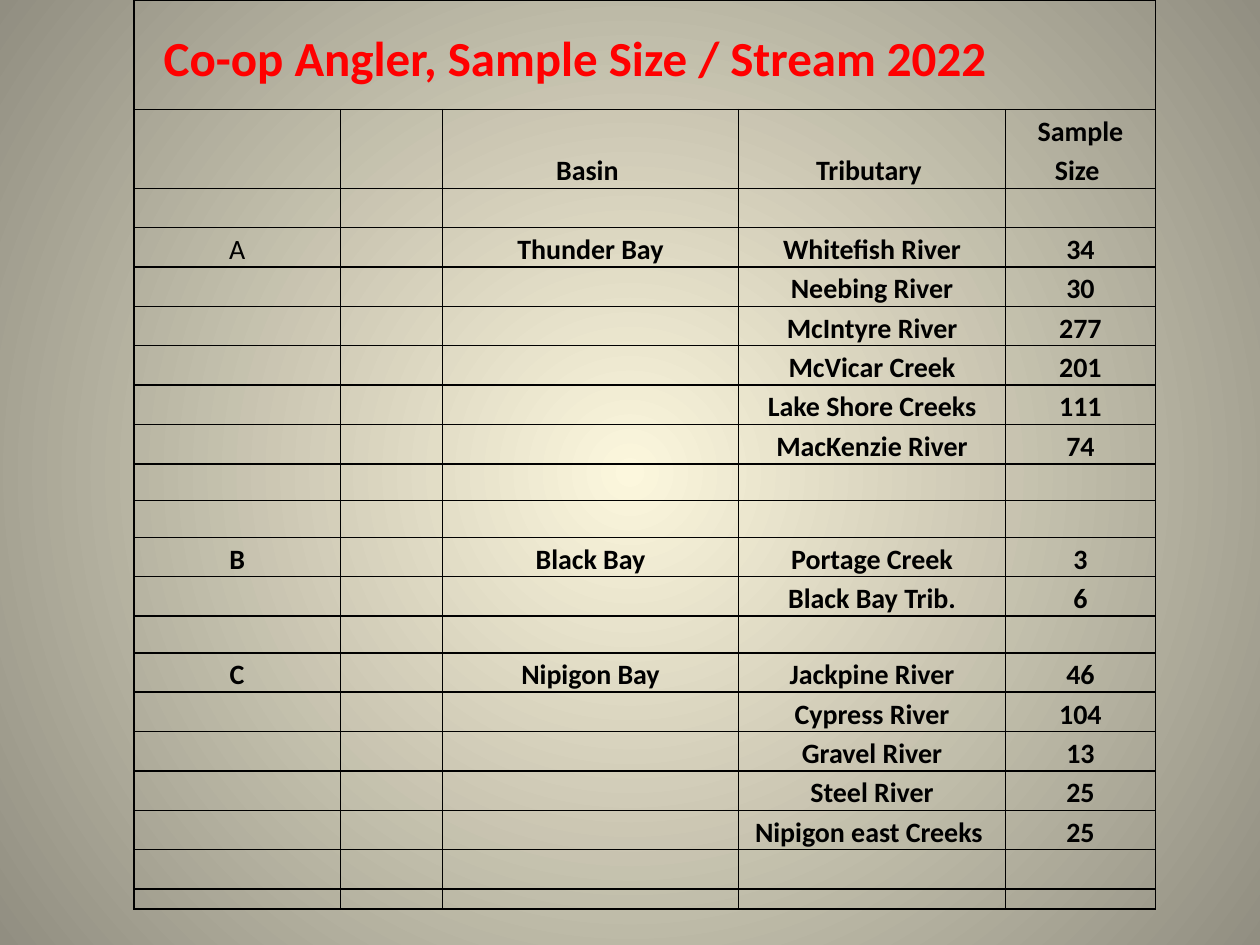
"""Build the 2022 co-op angler sample size slide."""
from typing import NamedTuple

from lxml import etree
from pptx import Presentation
from pptx.dml.color import RGBColor
from pptx.enum.text import MSO_ANCHOR, PP_ALIGN
from pptx.oxml.ns import qn
from pptx.util import Cm, Pt

BOTTOM = MSO_ANCHOR.BOTTOM
CENTER = PP_ALIGN.CENTER
LEFT = PP_ALIGN.LEFT
FONT = "Calibri"
COLORS = {"title": "FF0000", "ink": "000000", "glow": "FCF7DD", "edge": "918E81"}
COLUMN_WIDTHS = (4.16, 2.06, 5.97, 5.38, 3.02)
TITLE_ROWS = 2


class Row(NamedTuple):
    group: str = ""
    basin: str = ""
    tributary: str = ""
    size: str = ""
    height: float = 0.74

    def texts(self) -> tuple:
        return self.group, "", self.basin, self.tributary, self.size


ROWS = (
    Row(height=1.8),
    Row(height=0.41),
    Row("", "Basin ", "Tributary ", "Sample Size ", 1.47),
    Row(height=0.79),
    Row("A", "Thunder Bay", "Whitefish River", "34"),
    Row("", "", "Neebing River", "30"),
    Row("", "", "McIntyre River", "277"),
    Row("", "", "McVicar Creek", "201"),
    Row("", "", "Lake Shore Creeks", "111"),
    Row("", "", "MacKenzie River", "74"),
    Row(),
    Row(),
    Row("B", "Black Bay", "Portage Creek", "3"),
    Row("", "", "Black Bay Trib.", "6"),
    Row(),
    Row("C", "Nipigon Bay", "Jackpine River", "46"),
    Row("", "", "Cypress River", "104"),
    Row("", "", "Gravel River", "13"),
    Row("", "", "Steel River", "25"),
    Row("", "", "Nipigon east Creeks ", "25"),
    Row(height=0.79),
    Row(height=0.41),
)


def set_background(s) -> None:
    """Fill the slide with a glow from its centre."""
    fill = s.background.fill
    fill.gradient()
    for stop, name in zip(fill.gradient_stops, ("glow", "edge")):
        stop.color.rgb = RGBColor.from_string(COLORS[name])
    grad = s._element.find(".//" + qn("a:gradFill"))
    grad.remove(grad.find(qn("a:lin")))
    circle = etree.SubElement(grad, qn("a:path"), path="circle")
    etree.SubElement(circle, qn("a:fillToRect"), l="50000", t="50000", r="50000", b="50000")


def set_borders(cell, row: int, col: int) -> None:
    """Rule every side, leaving the title block open inside."""
    body = row >= TITLE_ROWS
    sides = {
        "L": body or col == 0,
        "R": body or col == len(COLUMN_WIDTHS) - 1,
        "T": body or row == 0,
        "B": body or row == TITLE_ROWS - 1,
    }
    tc_pr = cell._tc.get_or_add_tcPr()
    for side, ruled in sides.items():
        ln = etree.SubElement(tc_pr, qn(f"a:ln{side}"), w=str(Pt(1)))
        if ruled:
            solid = etree.SubElement(ln, qn("a:solidFill"))
            etree.SubElement(solid, qn("a:srgbClr"), val=COLORS["ink"])
        else:
            etree.SubElement(ln, qn("a:noFill"))


def set_text(cell, text: str, size: int = 16, color: str = "ink",
             align: PP_ALIGN = CENTER, bold: bool = True) -> None:
    """Write one formatted paragraph in a cell."""
    cell.text_frame.text = text
    p = cell.text_frame.paragraphs[0]
    p.alignment = align
    p.line_spacing = 1.15
    for r in p.runs:
        r.font.name = FONT
        r.font.size = Pt(size)
        r.font.bold = bold
        r.font.color.rgb = RGBColor.from_string(COLORS[color])


def format_cell(cell, row: int, col: int) -> None:
    """Set the margins, anchor, rules and fill of a cell."""
    cell.margin_left = cell.margin_right = Cm(0.17)
    cell.margin_top = cell.margin_bottom = 0
    cell.vertical_anchor = BOTTOM
    set_borders(cell, row, col)
    cell.fill.background()


def add_sample_table(s) -> None:
    """Add the table of streams and sample sizes."""
    table = s.shapes.add_table(
        len(ROWS), len(COLUMN_WIDTHS), Cm(2.7), 0,
        Cm(sum(COLUMN_WIDTHS)), Cm(sum(row.height for row in ROWS))).table
    table.first_row = table.horz_banding = False
    for column, width in zip(table.columns, COLUMN_WIDTHS):
        column.width = Cm(width)
    for i, row in enumerate(ROWS):
        table.rows[i].height = Cm(row.height)
        for j, text in enumerate(row.texts()):
            cell = table.cell(i, j)
            format_cell(cell, i, j)
            if text:
                set_text(cell, text, bold=text != "A")
            else:
                p = cell.text_frame.paragraphs[0]
                etree.SubElement(p._p, qn("a:endParaRPr"), sz="800")
    title = table.cell(0, 0)
    title.merge(table.cell(0, 3))
    title.margin_left = Cm(0.6)
    set_text(title, "Co-op Angler, Sample Size / Stream 2022", 28, "title", LEFT)


def main() -> None:
    """Build and save the slide."""
    prs = Presentation()
    prs.slide_width, prs.slide_height = Cm(25.4), Cm(19.05)
    s = prs.slides.add_slide(prs.slide_layouts[6])
    set_background(s)
    add_sample_table(s)
    prs.save("out.pptx")


if __name__ == "__main__":
    main()
